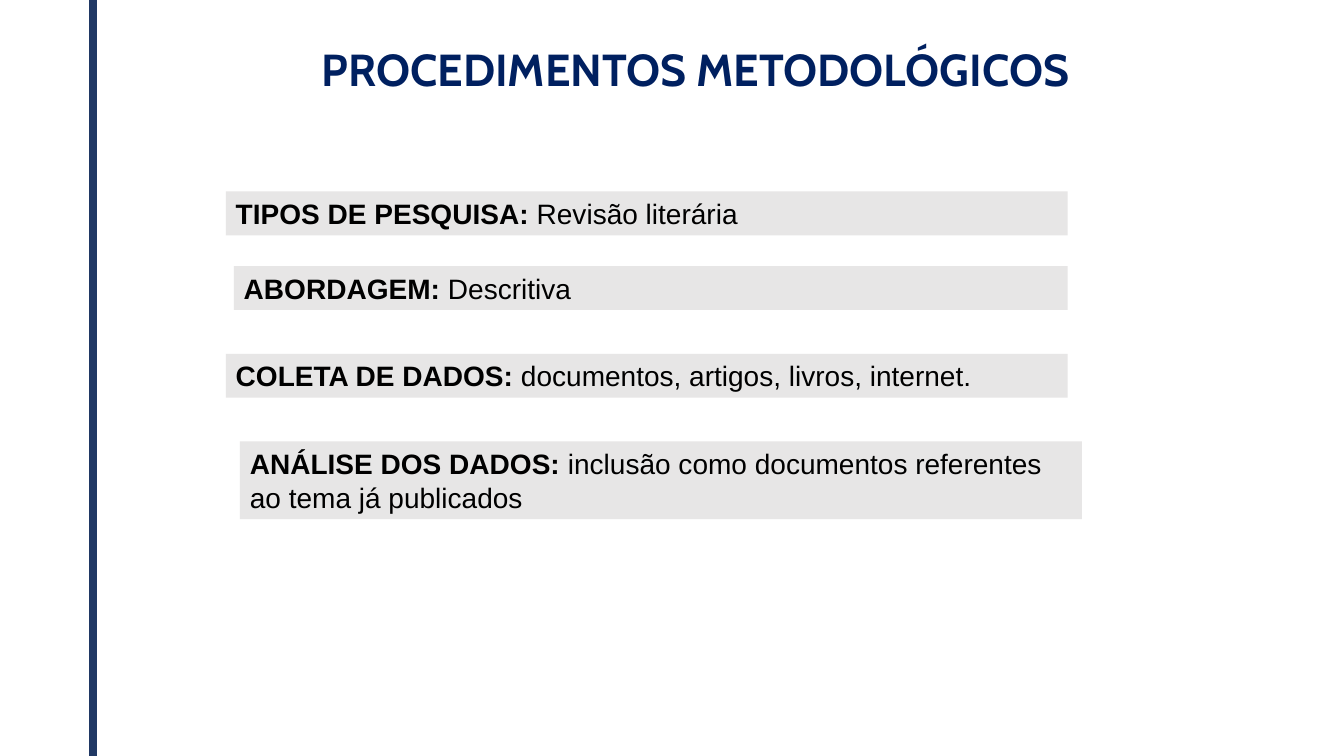
import pptx
import pptx.util
import pptx.dml.color
import pptx.enum.shapes
import pptx.enum.text
import pptx.oxml

text = pptx.enum.text
color = pptx.dml.color.RGBColor.from_string
points = pptx.util.Pt

theme = {
    "rule": color("203864"),
    "bar": color("E7E6E6"),
    "title": {"name": "Cabin", "size": points(32), "bold": True, "color": color("002060")},
    "label": {"name": "Arial", "size": points(20), "bold": True, "color": color("000000")},
    "body": {"name": "Arial", "size": points(20), "bold": False, "color": color("000000")},
}

deck = pptx.Presentation()
deck.slide_width = pptx.util.Inches(13.33)
deck.slide_height = pptx.util.Inches(7.5)
slide = deck.slides.add_slide(deck.slide_layouts[5])


def share(left, top, width, height):
    """Turn percentages of the slide into lengths."""
    wide, high = deck.slide_width / 100, deck.slide_height / 100
    return [int(n) for n in (left * wide, top * high, width * wide, height * high)]


def write(line, words, style):
    """Add a run and format it from a theme entry."""
    run = line.add_run()
    run.text = words
    for key, value in theme[style].items():
        if key == "color":
            run.font.color.rgb = value
        else:
            setattr(run.font, key, value)


# Vertical rule, drawn from bottom to top
edge, _, _, foot = share(6.9, 0, 0, 100)
rule = slide.shapes.add_connector(pptx.enum.shapes.MSO_CONNECTOR.STRAIGHT, edge, foot, edge, 0)
rule.line.color.rgb = theme["rule"]
rule.line.width = points(6)
rule._element.spPr.append(pptx.oxml.parse_xml(
    '<a:effectLst xmlns:a="http://schemas.openxmlformats.org/drawingml/2006/main"/>'))

# Title
title = slide.shapes.title
title.left, title.top, title.width, title.height = share(18.08, 0, 67.37, 18.93)
title.text_frame.vertical_anchor = text.MSO_ANCHOR.MIDDLE
title.text_frame.word_wrap = True
line = title.text_frame.paragraphs[0]
line.alignment = text.PP_ALIGN.CENTER
line.line_spacing = 0.9
write(line, "PROCEDIMENTOS METODOLÓGICOS", "title")

# Method bars: left, top, width, height in percent, then label and body
bars = [
    (16.8, 25.33, 62.64, 5.8, "TIPOS DE PESQUISA: ", "Revisão literária"),
    (17.4, 35.2, 62.04, 5.8, "ABORDAGEM: ", "Descritiva"),
    (16.8, 46.8, 62.64, 5.8, "COLETA DE DADOS:", " documentos, artigos, livros, internet."),
    (17.85, 58.4, 62.64, 10.27, "ANÁLISE DOS DADOS:",
     " inclusão como documentos referentes ao tema já publicados"),
]
frame = {
    "word_wrap": True,
    "auto_size": text.MSO_AUTO_SIZE.SHAPE_TO_FIT_TEXT,
    "vertical_anchor": text.MSO_ANCHOR.TOP,
}
for *place, label, body in bars:
    bar = slide.shapes.add_shape(pptx.enum.shapes.MSO_SHAPE.RECTANGLE, *share(*place))
    bar.shadow.inherit = False
    bar.fill.solid()
    bar.fill.fore_color.rgb = theme["bar"]
    bar.line.fill.background()
    for key, value in frame.items():
        setattr(bar.text_frame, key, value)
    line = bar.text_frame.paragraphs[0]
    line.alignment = text.PP_ALIGN.LEFT
    write(line, label, "label")
    write(line, body, "body")

deck.save("out.pptx")
